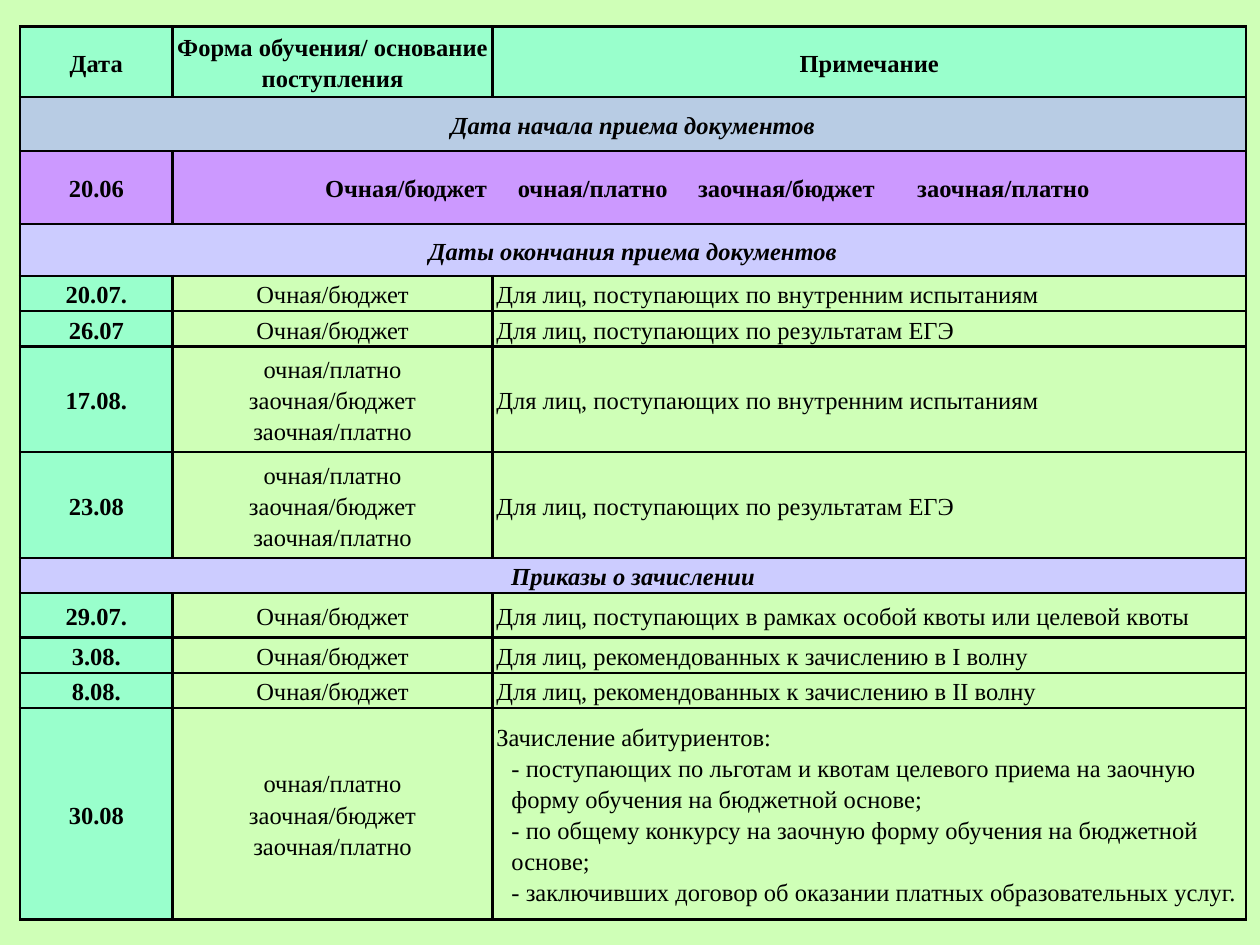
from lxml.etree import SubElement as Sub
from pptx import Presentation
from pptx.dml.color import RGBColor as Rgb
from pptx.enum.text import MSO_ANCHOR as Anchor, PP_ALIGN as Align
from pptx.oxml.ns import qn
from pptx.util import Inches, Pt

# Colours
LIME, MINT, BLUE, PLUM, LILAC = "CFFFB7", "99FFCC", "B8CCE4", "CC99FF", "CCCCFF"
INK = "000000"

# Column widths and places, in grid units (1000 columns by 750 rows)
COLS = [121, 254, 598]
STOPS = [118, 271, 414, 588]

# Words used in several rows
BUDGET = ["Очная/бюджет"]
OTHERS = ["очная/платно", "заочная/бюджет", "заочная/платно"]
INNER = ["Для лиц, поступающих по внутренним испытаниям"]
EXAM = ["Для лиц, поступающих по результатам ЕГЭ"]


def color(code):
    return Rgb.from_string(code)


class Deck:
    font, size, lead, edge = "Times New Roman", Pt(14), 1.15, Pt(1.5)

    def __init__(self):
        self.prs = Presentation()
        self.prs.slide_width, self.prs.slide_height = Inches(10), Inches(7.5)
        self.unit = self.prs.slide_width // 1000
        self.slide = self.prs.slides.add_slide(self.prs.slide_layouts[6])

    def back(self, code):
        fill = self.slide.background.fill
        fill.solid()
        fill.fore_color.rgb = color(code)

    def grid(self, left, top, cols, rows):
        """Add a plain table with the given column widths and row heights."""
        spots = [n * self.unit for n in (left, top, sum(cols), sum(rows))]
        table = self.slide.shapes.add_table(len(rows), len(cols), *spots).table
        table.first_row = table.horz_banding = False
        for col, wide in zip(table.columns, cols):
            col.width = wide * self.unit
        for row, high in zip(table.rows, rows):
            row.height = high * self.unit
        for cell in table.iter_cells():
            self.frame(cell)
        return table

    def frame(self, cell):
        """Set margins, borders and base font of a cell."""
        cell.margin_left = cell.margin_right = 3 * self.unit
        cell.margin_top = cell.margin_bottom = 0
        cell.vertical_anchor = Anchor.MIDDLE
        props = cell._tc.get_or_add_tcPr()
        for side in "LRTB":
            line = Sub(props, qn(f"a:ln{side}"), w=str(self.edge))
            Sub(Sub(line, qn("a:solidFill")), qn("a:srgbClr"), val=INK)
        cell.fill.background()
        self.style(cell.text_frame.paragraphs[0])

    def style(self, para, bold=False, slant=False):
        para.line_spacing = self.lead
        font = para.font
        font.name, font.size = self.font, self.size
        font.bold, font.italic = bold, slant
        font.color.rgb = color(INK)

    def put(self, cell, lines, fill=None, bold=False, slant=False, mid=True):
        """Fill a cell with paragraphs; dashed ones are indented."""
        if fill:
            cell.fill.solid()
            cell.fill.fore_color.rgb = color(fill)
        body = cell.text_frame
        for i, text in enumerate(lines):
            para = body.add_paragraph() if i else body.paragraphs[0]
            para.text = text
            para.alignment = Align.CENTER if mid else Align.LEFT
            if text.startswith("- "):
                props = para._p.get_or_add_pPr()
                props.set("marL", str(12 * self.unit))
                props.set("indent", "0")
            self.style(para, bold, slant)

    def tabs(self, cell, spots):
        """Put left tab stops into the cell's first paragraph."""
        props = cell.text_frame.paragraphs[0]._p.get_or_add_pPr()
        stops = Sub(props, qn("a:tabLst"))
        for spot in spots:
            Sub(stops, qn("a:tab"), pos=str(spot * self.unit), algn="l")
        props.find(qn("a:defRPr")).addprevious(stops)

    def band(self, table, row, text, fill):
        """Put a heading across the whole row."""
        cell = table.cell(row, 0)
        cell.merge(table.cell(row, len(table.columns) - 1))
        self.put(cell, [text], fill, bold=True, slant=True)

    def entry(self, table, row, date, form, note):
        """Put one date with its form of study and note."""
        self.put(table.cell(row, 0), [date], MINT, bold=True)
        self.put(table.cell(row, 1), form)
        self.put(table.cell(row, 2), note, mid=False)


def main():
    deck = Deck()
    deck.back(LIME)
    rows = [56, 43, 58, 41, 28, 28, 84, 84, 28, 35, 28, 28, 168]
    table = deck.grid(16, 21, COLS, rows)

    # Header row
    heads = ["Дата", "Форма обучения/ основание поступления", "Примечание"]
    for i, head in enumerate(heads):
        deck.put(table.cell(0, i), [head], MINT, bold=True)

    # Section bands
    deck.band(table, 1, "Дата начала приема документов", BLUE)
    deck.band(table, 3, "Даты окончания приема документов", LILAC)
    deck.band(table, 8, "Приказы о зачислении", LILAC)

    # Opening date, with all forms spread over tab stops
    deck.put(table.cell(2, 0), ["20.06"], PLUM, bold=True)
    forms = table.cell(2, 1)
    forms.merge(table.cell(2, 2))
    deck.tabs(forms, STOPS)
    line = "".join("\t" + form for form in BUDGET + OTHERS)
    deck.put(forms, [line], PLUM, bold=True, mid=False)

    # Closing dates and enrolment orders
    entries = {
        4: ("20.07.", BUDGET, INNER),
        5: ("26.07", BUDGET, EXAM),
        6: ("17.08.", OTHERS, INNER),
        7: ("23.08", OTHERS, EXAM),
        9: ("29.07.", BUDGET,
            ["Для лиц, поступающих в рамках особой квоты или целевой квоты"]),
        10: ("3.08.", BUDGET, ["Для лиц, рекомендованных к зачислению в I волну"]),
        11: ("8.08.", BUDGET, ["Для лиц, рекомендованных к зачислению в II волну"]),
        12: ("30.08", OTHERS, [
            "Зачисление абитуриентов:",
            "- поступающих по льготам и квотам целевого приема на заочную "
            "форму обучения на бюджетной основе;",
            "- по общему конкурсу на заочную форму обучения на бюджетной основе;",
            "- заключивших договор об оказании платных образовательных услуг."]),
    }
    for row, entry in entries.items():
        deck.entry(table, row, *entry)

    deck.prs.save("out.pptx")


if __name__ == "__main__":
    main()
